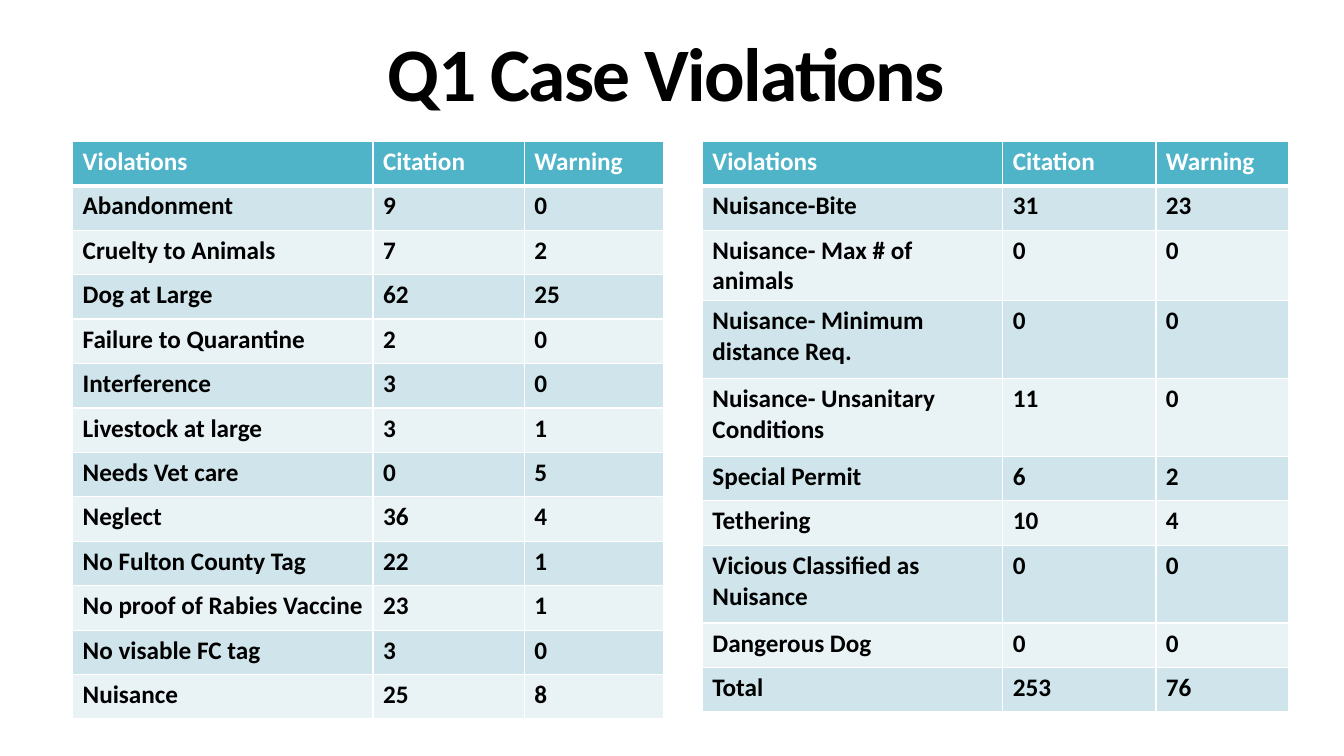
from lxml import etree
from pptx import Presentation
from pptx import util as u
from pptx.dml import color
from pptx.enum import text
from pptx.oxml import ns

COLOURS = {"header": "50B4C8", "odd": "D0E5EB", "even": "E9F2F5",
           "white": "FFFFFF", "black": "000000"}
ROW, TALL_ROW = 1.12, 1.96
HEADINGS = ("Violations", "Citation", "Warning")
LEFT_VIOLATIONS = [
    ("Abandonment", 9, 0), ("Cruelty to Animals", 7, 2), ("Dog at Large", 62, 25),
    ("Failure to Quarantine", 2, 0), ("Interference", 3, 0),
    ("Livestock at large", 3, 1), ("Needs Vet care", 0, 5), ("Neglect", 36, 4),
    ("No Fulton County Tag", 22, 1), ("No proof of Rabies Vaccine", 23, 1),
    ("No visable FC tag", 3, 0), ("Nuisance", 25, 8),
]
RIGHT_VIOLATIONS = [
    ("Nuisance-Bite", 31, 23), ("Nuisance- Max # of animals", 0, 0),
    ("Nuisance- Minimum distance Req.", 0, 0),
    ("Nuisance- Unsanitary Conditions", 11, 0), ("Special Permit", 6, 2),
    ("Tethering", 10, 4), ("Vicious Classified as Nuisance", 0, 0),
    ("Dangerous Dog", 0, 0), ("Total", 253, 76),
]
TALL_VIOLATIONS = {"Nuisance- Minimum distance Req.", "Nuisance- Unsanitary Conditions",
                   "Vicious Classified as Nuisance"}


def rgb(name):
    """Return the named colour."""
    return color.RGBColor.from_string(COLOURS[name])


def write(paragraph, words, size, colour):
    """Write one bold run in the slide's font."""
    run = paragraph.add_run()
    run.text = words
    formats = {"name": "Calibri", "size": u.Pt(size), "bold": True}
    for attribute, value in formats.items():
        setattr(run.font, attribute, value)
    run.font.color.rgb = rgb(colour)
    return run


def add_borders(cell, widths):
    """Draw white cell borders with the given widths in points."""
    properties = cell._tc.get_or_add_tcPr()
    for side, points in widths.items():
        line = etree.SubElement(properties, ns.qn(f"a:ln{side}"), w=str(u.Pt(points)))
        fill = etree.SubElement(line, ns.qn("a:solidFill"))
        etree.SubElement(fill, ns.qn("a:srgbClr"), val=COLOURS["white"])


def add_title(slide, words, left, top, width, height):
    """Place the centred slide title in its box."""
    shape = slide.shapes.add_textbox(*map(u.Cm, (left, top, width, height)))
    frame = shape.text_frame
    formats = {"word_wrap": True, "vertical_anchor": text.MSO_ANCHOR.MIDDLE}
    for attribute, value in formats.items():
        setattr(frame, attribute, value)
    paragraph = frame.paragraphs[0]
    paragraph.alignment = text.PP_ALIGN.CENTER
    paragraph.line_spacing = 0.85
    run = write(paragraph, words, 54, "black")
    run.font._element.set("spc", "-120")


def add_violations(slide, violations, left, top, widths):
    """Place a banded table of violations at the given corner."""
    rows = [HEADINGS, *violations]
    heights = [TALL_ROW if row[0] in TALL_VIOLATIONS else ROW for row in rows]
    box = map(u.Cm, (left, top, sum(widths), sum(heights)))
    table = slide.shapes.add_table(len(rows), len(widths), *box).table
    for column, width in zip(table.columns, widths):
        column.width = u.Cm(width)
    for index, (row, height) in enumerate(zip(rows, heights)):
        table.rows[index].height = u.Cm(height)
        band = "header" if index == 0 else "odd" if index % 2 else "even"
        for cell, value in zip(table.rows[index].cells, row):
            add_borders(cell, {"L": 1, "R": 1, "T": 3 if index == 1 else 1,
                               "B": 3 if index == 0 else 1})
            cell.fill.solid()
            cell.fill.fore_color.rgb = rgb(band)
            write(cell.text_frame.paragraphs[0], str(value), 18,
                  "white" if index == 0 else "black")


def main():
    """Build and save the slide of case violations."""
    presentation = Presentation()
    presentation.slide_width, presentation.slide_height = u.Cm(33.87), u.Cm(19.05)
    slide = presentation.slides.add_slide(presentation.slide_layouts[6])
    add_title(slide, "Q1 Case Violations", 1.83, 0, 29.92, 3.96)
    add_violations(slide, LEFT_VIOLATIONS, 1.83, 3.56, (7.57, 3.81, 3.51))
    add_violations(slide, RIGHT_VIOLATIONS, 17.7, 3.56, (7.57, 3.86, 3.35))
    presentation.save("out.pptx")


if __name__ == "__main__":
    main()
